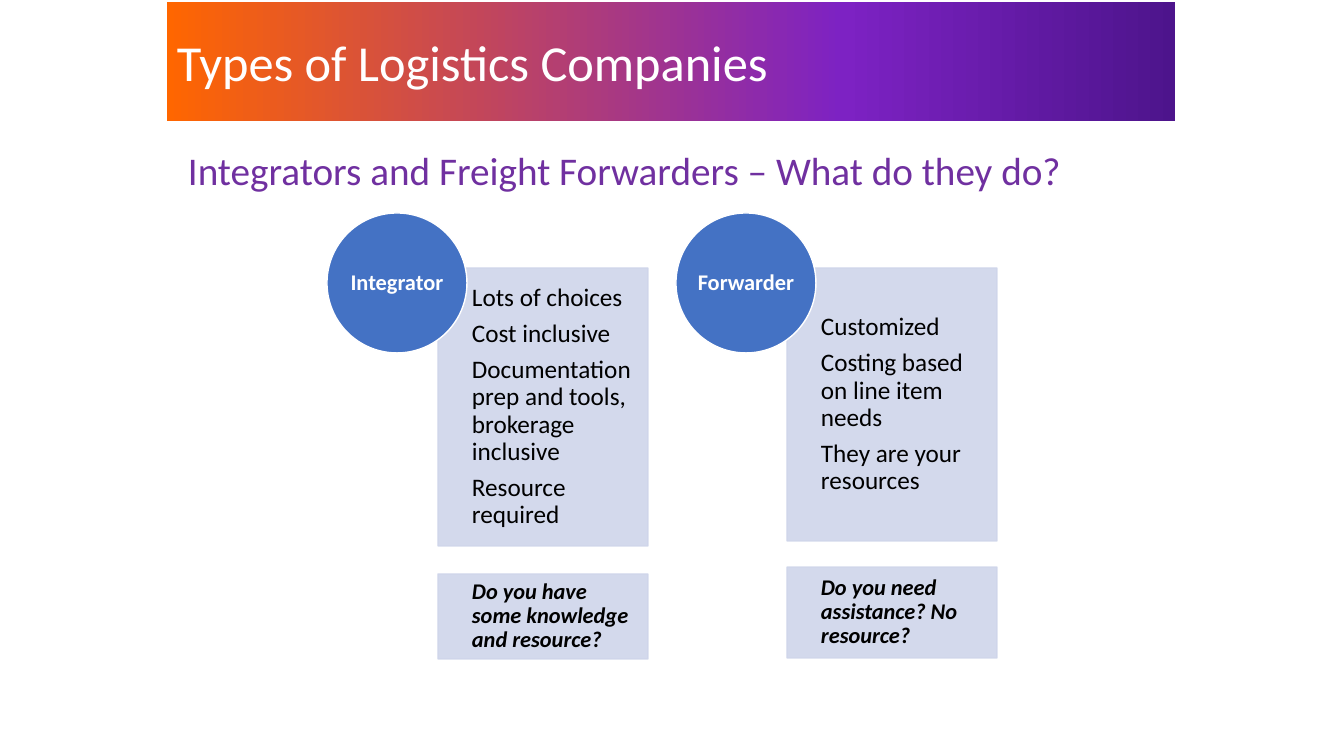
from lxml import etree
from pptx import Presentation
from pptx import util as u
from pptx.dml.color import RGBColor
from pptx.enum import shapes, text
from pptx.oxml import parse_xml
from pptx.oxml.ns import nsdecls, qn

PX = 914400 / 100.8
FONT = "Calibri"
WHITE = RGBColor(0xFF, 0xFF, 0xFF)
BLACK = RGBColor(0, 0, 0)
PURPLE = RGBColor(0x70, 0x30, 0xA0)
BLUE = RGBColor(0x44, 0x72, 0xC4)
PALE = RGBColor(0xCF, 0xD5, 0xEA)
BANNER = ((0, RGBColor(0x4D, 0x14, 0x8C)), (33, RGBColor(0x7D, 0x22, 0xC3)),
          (100, RGBColor(0xFF, 0x66, 0x00)))

# circle left, name, (top, height) of each card, bullet points, question
COMPANIES = (
    (327, "Integrator", (268, 278), (574, 85),
     ["Lots of choices", "Cost inclusive",
      "Documentation prep and tools, brokerage inclusive",
      "Resource required"],
     "Do you have some knowledge and resource?"),
    (676, "Forwarder", (268, 273), (567, 91),
     ["Customized", "Costing based on line item needs",
      "They are your resources"],
     "Do you need assistance? No resource?"),
)


def px(n):
    return u.Emu(round(n * PX))


def write(sp, lines, size, color, bold=False, italic=False, wrap=True,
          align=text.PP_ALIGN.LEFT, anchor=text.MSO_ANCHOR.MIDDLE,
          insets=(10, 5, 10, 5), spacing=0.9, after=0):
    """Fill a shape with one paragraph per line; insets are left, top, right, bottom."""
    tf = sp.text_frame
    tf.word_wrap = wrap
    tf.auto_size = text.MSO_AUTO_SIZE.NONE
    tf.vertical_anchor = anchor
    tf.margin_left, tf.margin_top, tf.margin_right, tf.margin_bottom = map(px, insets)
    for i, line in enumerate(lines):
        p = tf.add_paragraph() if i else tf.paragraphs[0]
        p.alignment = align
        p.line_spacing = spacing
        p.space_before = u.Pt(0)
        p.space_after = u.Pt(after)
        r = p.add_run()
        r.text = line
        r.font.name, r.font.size = FONT, u.Pt(size)
        r.font.bold, r.font.italic = bold, italic
        r.font.color.rgb = color


def add_shape(s, kind, box, fill, line, opacity=100):
    sp = s.shapes.add_shape(kind, *map(px, box))
    sp.shadow.inherit = False
    sp.fill.solid()
    sp.fill.fore_color.rgb = fill
    sp.line.color.rgb = line
    sp.line.width = u.Pt(1)
    if opacity < 100:
        for clr in sp._element.spPr.iter(qn("a:srgbClr")):
            etree.SubElement(clr, qn("a:alpha")).set("val", str(opacity * 1000))
    return sp


def add_title(s, title, box):
    sp = s.shapes.title
    sp.left, sp.top, sp.width, sp.height = map(px, box)
    stops = "".join(f'<a:gs pos="{pos * 1000}"><a:srgbClr val="{c}"/></a:gs>'
                    for pos, c in BANNER)
    sp._element.spPr.append(parse_xml(
        f'<a:gradFill {nsdecls("a")} rotWithShape="1"><a:gsLst>{stops}</a:gsLst>'
        '<a:lin ang="10800000" scaled="0"/></a:gradFill>'))
    write(sp, [title], 36, WHITE, spacing=1.0)


def add_card(s, left, span, lines, size, pad, **fmt):
    top, height = span
    sp = add_shape(s, shapes.MSO_SHAPE.RECTANGLE, (left, top, 210, height),
                   PALE, PALE, opacity=90)
    write(sp, lines, size, BLACK, insets=(34, pad, pad, pad),
          after=round(size * 0.35, 1), **fmt)


def add_company(s, left, name, points_span, question_span, points, question):
    add_card(s, left + 111, points_span, points, 18, 14)
    add_card(s, left + 111, question_span, [question], 16, 12, bold=True, italic=True)
    circle = add_shape(s, shapes.MSO_SHAPE.OVAL, (left, 213, 140, 140), BLUE, WHITE)
    write(circle, [name], 16, WHITE, bold=True, wrap=False,
          align=text.PP_ALIGN.CENTER, insets=(0, 0, 0, 0))


def main():
    prs = Presentation()
    prs.slide_width, prs.slide_height = px(1344), px(756)
    s = prs.slides.add_slide(prs.slide_layouts[5])
    add_title(s, "Types of Logistics Companies", (167, 2, 1008, 119))
    subtitle = s.shapes.add_textbox(*map(px, (178, 147, 966, 54)))
    write(subtitle, ["Integrators and Freight Forwarders – What do they do?"],
          28, PURPLE, anchor=text.MSO_ANCHOR.TOP)
    for company in COMPANIES:
        add_company(s, *company)
    prs.save("out.pptx")


if __name__ == "__main__":
    main()
